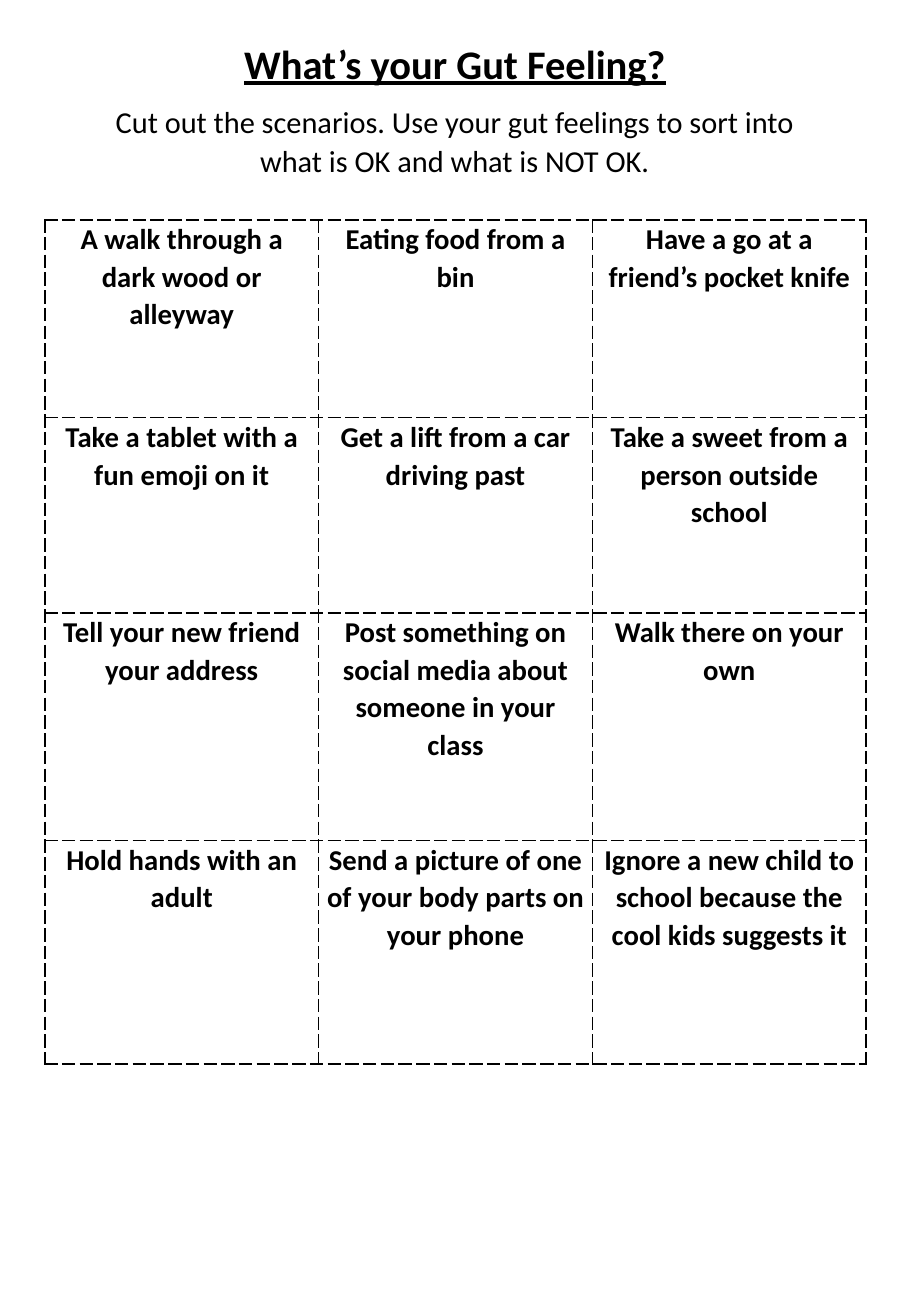
from lxml.etree import SubElement
from pptx import Presentation
from pptx.dml.color import RGBColor
from pptx.enum.text import MSO_AUTO_SIZE as AutoSize, PP_ALIGN as Align
from pptx.oxml.ns import qn
from pptx.util import Pt

BLACK = "000000"
ROW_HEIGHTS = [117.2, 115.7, 134.8, 132.6]
COLUMN_WIDTH = 162.3
SCENARIOS = [
    ["A walk through a dark wood or alleyway",
     "Eating food from a bin",
     "Have a go at a friend’s pocket knife"],
    ["Take a tablet with a fun emoji on it",
     "Get a lift from a car driving past",
     "Take a sweet from a person outside school"],
    ["Tell your new friend your address",
     "Post something on social media about someone in your class",
     "Walk there on your own"],
    ["Hold hands with an adult",
     "Send a picture of one of your body parts on your phone",
     "Ignore a new child to school because the cool kids suggests it"],
]


def color(value):
    return RGBColor.from_string(value)


def write(para, text, size, bold=False, underline=False, after=0):
    para.alignment = Align.CENTER
    para.line_spacing = 1.07
    para.space_after = Pt(after)
    span = para.add_run()
    span.text = text
    font = span.font
    font.name, font.size = "Calibri", Pt(size)
    font.bold, font.underline = bold, underline
    font.color.rgb = color(BLACK)


def dash_borders(cell):
    properties = cell._tc.get_or_add_tcPr()
    for side in ("lnL", "lnR", "lnT", "lnB"):
        line = SubElement(properties, qn(f"a:{side}"), w=str(Pt(1)))
        fill = SubElement(line, qn("a:solidFill"))
        SubElement(fill, qn("a:srgbClr"), val=BLACK)
        SubElement(line, qn("a:prstDash"), val="sysDash")


def add_heading(page):
    box = page.shapes.add_textbox(Pt(50.4), Pt(17.3), Pt(438.5), Pt(92.2))
    frame = box.text_frame
    frame.word_wrap = True
    frame.auto_size = AutoSize.SHAPE_TO_FIT_TEXT
    write(frame.paragraphs[0], "What’s your Gut Feeling?", 24,
          bold=True, underline=True, after=8)
    write(frame.add_paragraph(),
          "Cut out the scenarios. Use your gut feelings to sort into "
          "what is OK and what is NOT OK.", 18, after=8)


def add_cards(page):
    columns = len(SCENARIOS[0])
    table = page.shapes.add_table(
        len(SCENARIOS), columns, Pt(26.6), Pt(130.3),
        Pt(COLUMN_WIDTH * columns), Pt(sum(ROW_HEIGHTS))).table
    table.first_row = table.horz_banding = False
    for column in table.columns:
        column.width = Pt(COLUMN_WIDTH)
    for row, height, texts in zip(table.rows, ROW_HEIGHTS, SCENARIOS):
        row.height = Pt(height)
        for cell, text in zip(row.cells, texts):
            cell.margin_left = cell.margin_right = Pt(4.3)
            cell.margin_top = cell.margin_bottom = 0
            dash_borders(cell)
            cell.fill.background()
            write(cell.text_frame.paragraphs[0], text, 17, bold=True)


def main():
    deck = Presentation()
    deck.slide_width, deck.slide_height = Pt(540), Pt(779.76)
    page = deck.slides.add_slide(deck.slide_layouts[6])

    # Scenario cards to cut out
    add_cards(page)

    # Title and instructions
    add_heading(page)

    deck.save("out.pptx")


if __name__ == "__main__":
    main()
